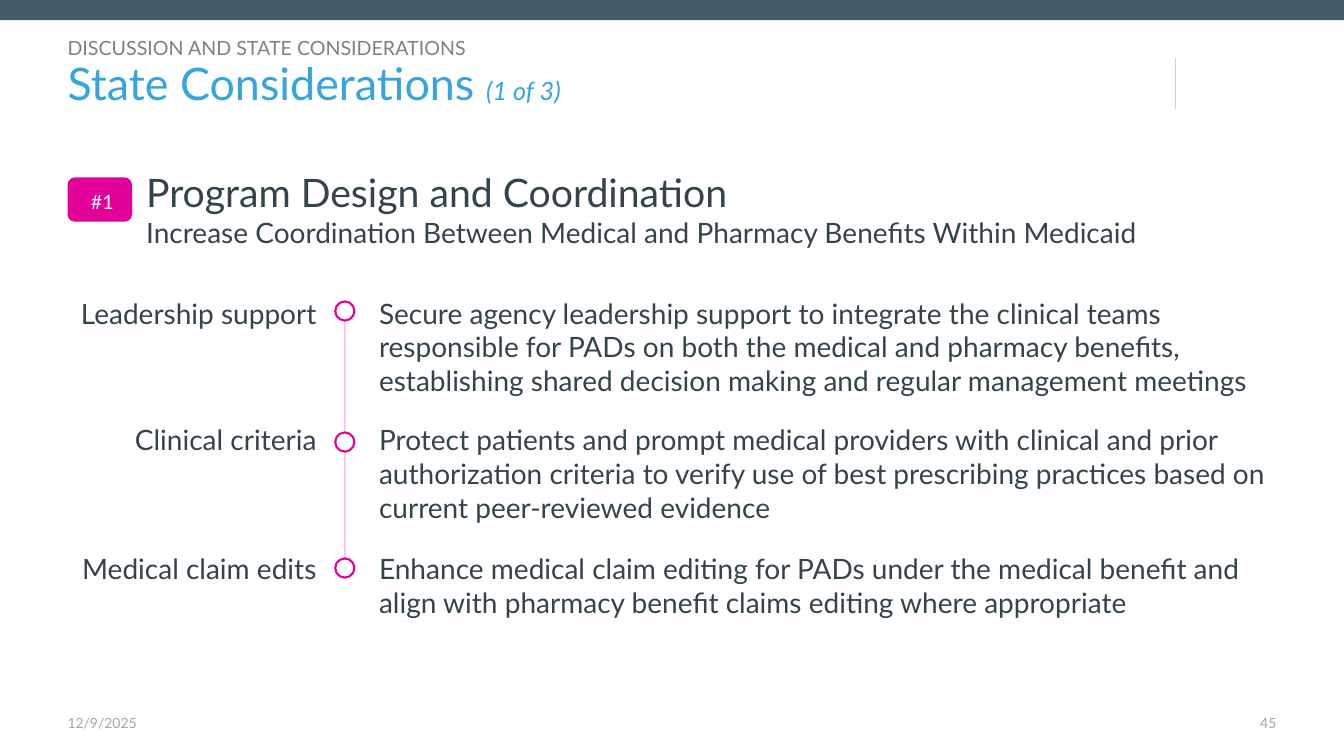
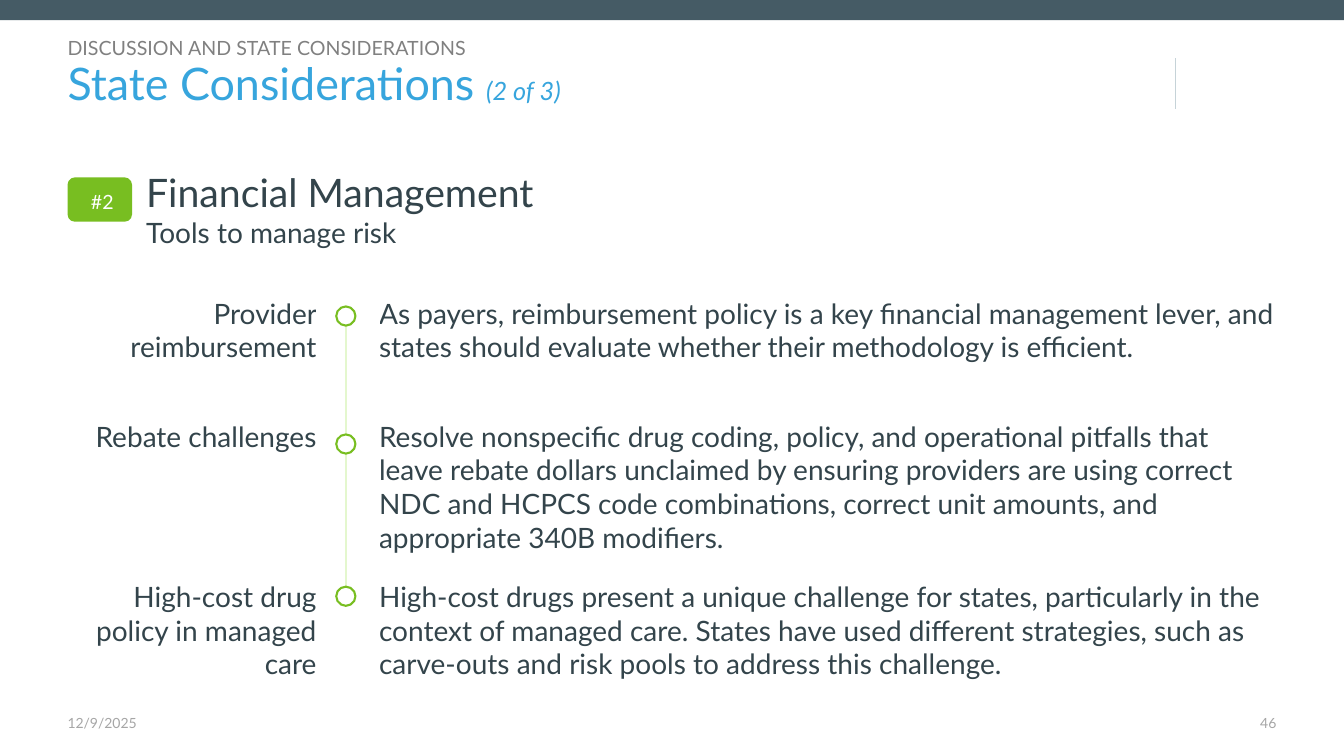
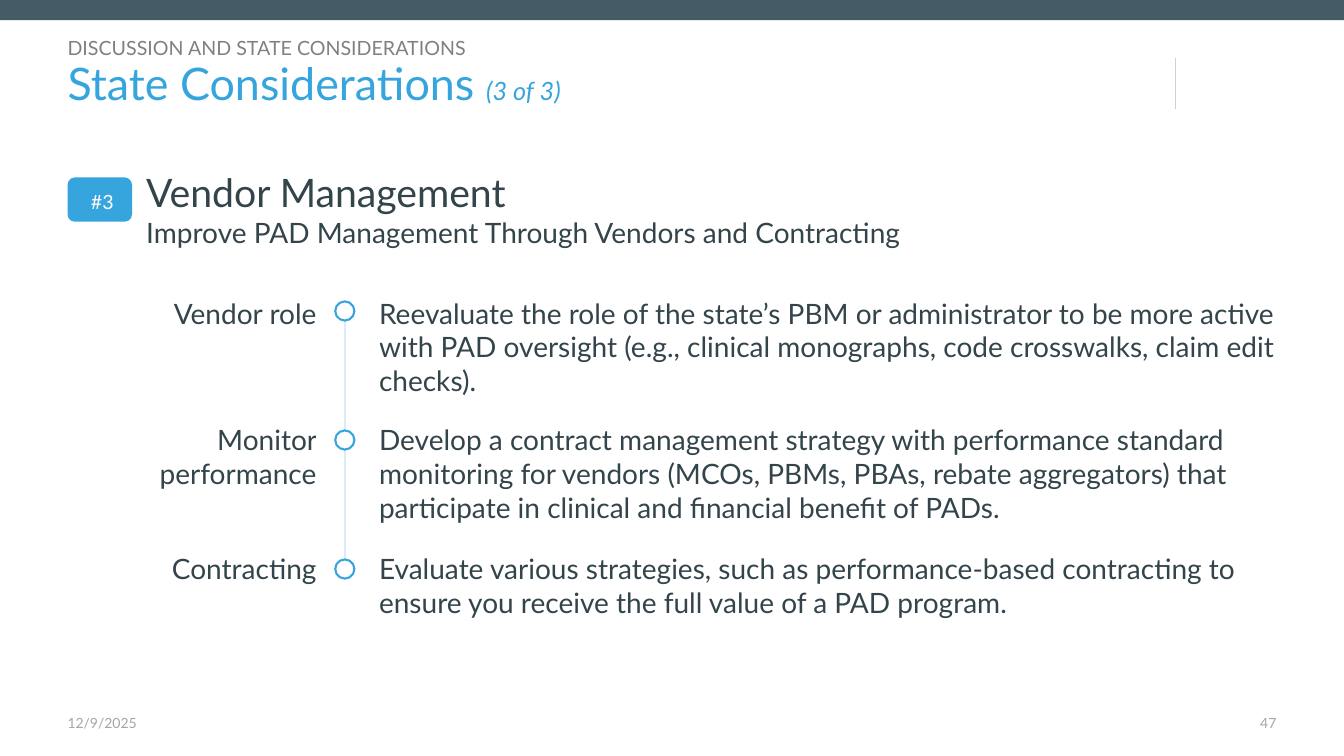
from pptx import Presentation
from pptx.dml.color import RGBColor
from pptx.enum.shapes import MSO_CONNECTOR, MSO_SHAPE
from pptx.enum.text import MSO_ANCHOR, MSO_AUTO_SIZE, PP_ALIGN
from pptx.oxml.ns import qn
from pptx.util import Inches, Pt
from lxml import etree

LEFT, CENTER, RIGHT = PP_ALIGN.LEFT, PP_ALIGN.CENTER, PP_ALIGN.RIGHT
TOP, MIDDLE = MSO_ANCHOR.TOP, MSO_ANCHOR.MIDDLE
NO_AUTOFIT = MSO_AUTO_SIZE.NONE
RECT, ROUNDED, OVAL = MSO_SHAPE.RECTANGLE, MSO_SHAPE.ROUNDED_RECTANGLE, MSO_SHAPE.OVAL
STRAIGHT = MSO_CONNECTOR.STRAIGHT

FONT = "Lato"
WHITE = RGBColor(0xFF, 0xFF, 0xFF)
SLATE = RGBColor(0x45, 0x5B, 0x65)
INK = RGBColor(0x33, 0x44, 0x4B)
GRAY = RGBColor(0x80, 0x80, 0x80)
PALE_GRAY = RGBColor(0xA6, 0xA6, 0xA6)
RULE = RGBColor(0xC6, 0xD3, 0xD8)
BLUE = RGBColor(0x37, 0xA5, 0xDD)
PALE_BLUE = RGBColor(0xD7, 0xED, 0xF8)
PINK = RGBColor(0xE1, 0x00, 0x98)
PALE_PINK = RGBColor(0xFF, 0xC6, 0xED)
GREEN = RGBColor(0x78, 0xBE, 0x21)
PALE_GREEN = RGBColor(0xE4, 0xF7, 0xCE)

# Grid, in inches
SLIDE_W, SLIDE_H = 13.33, 7.5
MARGIN = 0.67
CONTENT_W = SLIDE_W - 2 * MARGIN
RULE_X = 11.66
HEADING_X = 1.45
FOOTER_Y, FOOTER_H = 7.09, 0.22
TABLE_Y = 2.94
COLUMNS = (2.47, 0.62, CONTENT_W - 2.47 - 0.62)
ROWS = (1.22, 1.28, 0.69)
DOT = 0.19

SECTION = "DISCUSSION AND STATE CONSIDERATIONS"
DATE = "12/9/2025"
FIRST_PAGE = 45

TOPICS = [
    dict(
        color=PINK, pale=PALE_PINK, axis_x=3.42, dot_tops=(2.99, 4.29, 5.54),
        heading="Program Design and Coordination",
        subheading="Increase Coordination Between Medical and Pharmacy Benefits Within Medicaid",
        rows=[
            ("Leadership support",
             "Secure agency leadership support to integrate the clinical teams responsible for PADs "
             "on both the medical and pharmacy benefits, establishing shared decision making and "
             "regular management meetings"),
            ("Clinical criteria",
             "Protect patients and prompt medical providers with clinical and prior authorization "
             "criteria to verify use of best prescribing practices based on current peer-reviewed "
             "evidence"),
            ("Medical claim edits",
             "Enhance medical claim editing for PADs under the medical benefit and align with "
             "pharmacy benefit claims editing where appropriate"),
        ]),
    dict(
        color=GREEN, pale=PALE_GREEN, axis_x=3.43, dot_tops=(3.04, 4.31, 5.82),
        heading="Financial Management",
        subheading="Tools to manage risk",
        rows=[
            ("Provider reimbursement",
             "As payers, reimbursement policy is a key financial management lever, and states "
             "should evaluate whether their methodology is efficient."),
            ("Rebate challenges",
             "Resolve nonspecific drug coding, policy, and operational pitfalls that leave rebate "
             "dollars unclaimed by ensuring providers are using correct NDC and HCPCS code "
             "combinations, correct unit amounts, and appropriate 340B modifiers."),
            ("High-cost drug policy in managed care",
             "High-cost drugs present a unique challenge for states, particularly in the context of "
             "managed care. States have used different strategies, such as carve-outs and risk "
             "pools to address this challenge."),
        ]),
    dict(
        color=BLUE, pale=PALE_BLUE, axis_x=3.42, dot_tops=(2.99, 4.27, 5.55),
        heading="Vendor Management",
        subheading="Improve PAD Management Through Vendors and Contracting",
        rows=[
            ("Vendor role",
             "Reevaluate the role of the state’s PBM or administrator to be more active with PAD "
             "oversight (e.g., clinical monographs, code crosswalks, claim edit checks)."),
            ("Monitor performance",
             "Develop a contract management strategy with performance standard monitoring for "
             "vendors (MCOs, PBMs, PBAs, rebate aggregators) that participate in clinical and "
             "financial benefit of PADs."),
            ("Contracting",
             "Evaluate various strategies, such as performance-based contracting to ensure you "
             "receive the full value of a PAD program."),
        ]),
]


def place(sp, x, y, w, h):
    sp.left, sp.top, sp.width, sp.height = (Inches(v) for v in (x, y, w, h))


def set_frame(tf, insets, anchor=TOP):
    """Set wrapping, anchor and the left, top, right and bottom insets."""
    tf.word_wrap = True
    tf.auto_size = NO_AUTOFIT
    tf.vertical_anchor = anchor
    tf.margin_left, tf.margin_top, tf.margin_right, tf.margin_bottom = (
        Inches(v) for v in insets)


def add_run(p, text, size, color, italic=None):
    r = p.add_run()
    r.text = text
    r.font.name, r.font.size, r.font.italic = FONT, Pt(size), italic
    r.font.color.rgb = color


def add_text(s, box, lines, align=LEFT, insets=(0, 0, 0, 0)):
    """Add a text box; lines holds (text, size, color) paragraphs."""
    tf = s.shapes.add_textbox(*(Inches(v) for v in box)).text_frame
    set_frame(tf, insets)
    for i, line in enumerate(lines):
        p = tf.paragraphs[0] if i == 0 else tf.add_paragraph()
        p.alignment = align
        add_run(p, *line)


def add_shape(shapes, kind, box, fill, line=None):
    sp = shapes.add_shape(kind, *(Inches(v) for v in box))
    sp.shadow.inherit = False
    sp.fill.solid()
    sp.fill.fore_color.rgb = fill
    if line is None:
        sp.line.fill.background()
    else:
        sp.line.color.rgb = line
        sp.line.width = Pt(1.5)
    return sp


def add_vertical(shapes, x, top, bottom, color, width):
    line = shapes.add_connector(STRAIGHT, *(Inches(v) for v in (x, top, x, bottom)))
    line.line.color.rgb = color
    line.line.width = Pt(width)
    etree.SubElement(line._element.spPr, qn("a:effectLst"))


def add_frame(s, number, total):
    """Band, section label, title and footer shared by every slide."""
    add_shape(s.shapes, RECT, (0, 0, SLIDE_W, 0.2), SLATE)
    add_vertical(s.shapes, RULE_X, 0.58, 1.08, RULE, 0.25)

    title, section = s.shapes.title, s.placeholders[1]
    place(title, MARGIN, 0.59, 10.5, 0.5)
    set_frame(title.text_frame, (0, 0.07, 0, 0.05), MIDDLE)
    p = title.text_frame.paragraphs[0]
    p.alignment, p.line_spacing = LEFT, 0.9
    add_run(p, "State Considerations ", 32, BLUE)
    add_run(p, f"({number} of {total})", 18, BLUE, True)

    place(section, MARGIN, 0.35, 5.15, 0.22)
    set_frame(section.text_frame, (0, 0.05, 0, 0.05), MIDDLE)
    p = section.text_frame.paragraphs[0]
    p.line_spacing, p.space_before = 1.08, Pt(0)
    pPr = p._p.get_or_add_pPr()
    pPr.set("marL", "0")
    pPr.set("indent", "0")
    etree.SubElement(pPr, qn("a:buNone"))
    add_run(p, SECTION, 14, GRAY)

    page = str(FIRST_PAGE + number - 1)
    add_text(s, (MARGIN, FOOTER_Y, 2, FOOTER_H), [(DATE, 10, PALE_GRAY)])
    add_text(s, (RULE_X, FOOTER_Y, 1, FOOTER_H), [(page, 10, PALE_GRAY)], RIGHT)


def add_heading(s, number, topic):
    """Numbered badge with heading and subheading."""
    add_text(s, (HEADING_X, 1.62, SLIDE_W - MARGIN - HEADING_X, 0.91),
             [(topic["heading"], 28, INK), (topic["subheading"], 20, INK)],
             insets=(0, 0.05, 0, 0.05))
    badge = add_shape(s.shapes, ROUNDED, (MARGIN, 1.76, 0.64, 0.44), topic["color"])
    set_frame(badge.text_frame, (0.15, 0.08, 0.1, 0.05), MIDDLE)
    p = badge.text_frame.paragraphs[0]
    p.alignment, p.line_spacing, p.space_after = CENTER, 1.07, Pt(8)
    add_run(p, f"#{number}", 14, WHITE)


def add_considerations(s, rows):
    """Table of labels and descriptions, with a free column for the timeline."""
    table = s.shapes.add_table(
        len(ROWS), len(COLUMNS), Inches(MARGIN), Inches(TABLE_Y),
        Inches(CONTENT_W), Inches(sum(ROWS))).table
    table.first_row = table.horz_banding = False
    for column, width in zip(table.columns, COLUMNS):
        column.width = Inches(width)
    for row, height, (label, description) in zip(table.rows, ROWS, rows):
        row.height = Inches(height)
        for cell, text, align in zip(row.cells, (label, "", description), (RIGHT, LEFT, LEFT)):
            cell.fill.background()
            cell.margin_left = cell.margin_top = cell.margin_right = 0
            cell.margin_bottom = Inches(0.25)
            if text:
                p = cell.text_frame.paragraphs[0]
                p.alignment = align
                add_run(p, text, 20, INK)


def add_timeline(s, topic):
    """Grouped vertical line with one ring per table row."""
    shapes = s.shapes.add_group_shape().shapes
    x, tops = topic["axis_x"], topic["dot_tops"]
    add_vertical(shapes, x, tops[0] + DOT, tops[-1], topic["pale"], 1.5)
    for top in tops:
        add_shape(shapes, OVAL, (x - DOT / 2, top, DOT, DOT), WHITE, topic["color"])


def main():
    prs = Presentation()
    prs.slide_width, prs.slide_height = Inches(SLIDE_W), Inches(SLIDE_H)
    for number, topic in enumerate(TOPICS, 1):
        s = prs.slides.add_slide(prs.slide_layouts[1])
        add_frame(s, number, len(TOPICS))
        add_considerations(s, topic["rows"])
        add_timeline(s, topic)
        add_heading(s, number, topic)
    prs.save("out.pptx")


if __name__ == "__main__":
    main()
